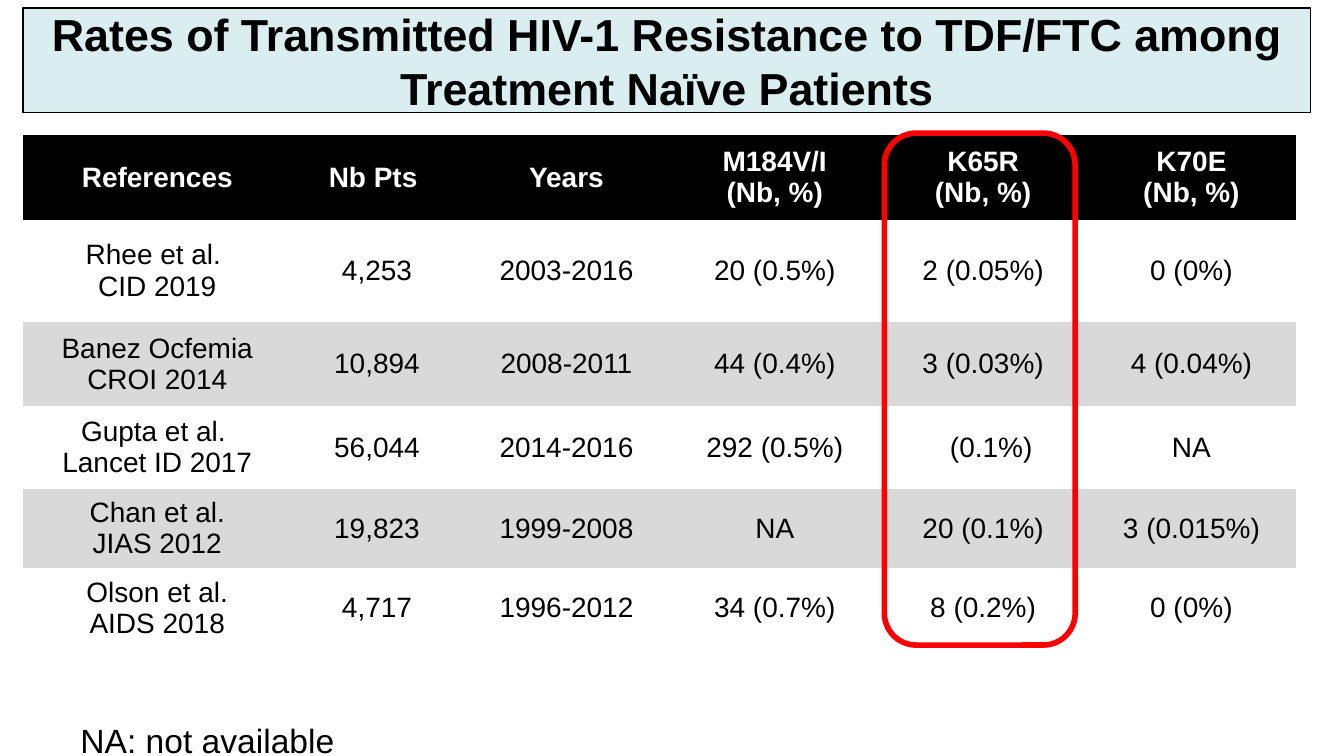
from lxml.etree import SubElement
from pptx import Presentation
from pptx.dml.color import RGBColor
from pptx.enum.shapes import MSO_SHAPE as Shape
from pptx.enum.text import MSO_ANCHOR as Anchor, MSO_AUTO_SIZE as AutoSize, PP_ALIGN as Align
from pptx.oxml.ns import qn
from pptx.util import Inches, Pt

BLACK = RGBColor(0x00, 0x00, 0x00)
WHITE = RGBColor(0xFF, 0xFF, 0xFF)
GREY = RGBColor(0xD9, 0xD9, 0xD9)
PALE_TEAL = RGBColor(0xDA, 0xED, 0xEF)
RED = RGBColor(0xFF, 0x00, 0x00)

FONT = "Arial"
PLAIN_TABLE = "{2D5ABB26-0587-4C30-8999-92F81FD0307C}"
SLIDE_WIDTH = 10
SLIDE_HEIGHT = SLIDE_WIDTH * 9 / 16
INSET = 0.01
COLUMNS = [2, 1.27, 1.55, 1.55, 1.55, 1.55]
ROWS = [0.62, 0.77, 0.62, 0.62, 0.59, 0.59]
ROW_FILLS = [BLACK, WHITE, GREY, WHITE, GREY, None]
EDGES = ["lnL", "lnR", "lnT", "lnB"]
RULED_EDGES = {0: ["lnT", "lnB"], 1: ["lnT"]}
K65R_COLUMN = 4
RATES = [
    ["References", "Nb Pts ", "Years", "M184V/I\n(Nb, %)", "K65R\n(Nb, %)", "K70E\n(Nb, %)"],
    ["Rhee et al. \nCID 2019", "4,253", "2003-2016", "20 (0.5%)", "2 (0.05%)", "0 (0%)"],
    ["Banez Ocfemia CROI 2014", "10,894", "2008-2011", "44 (0.4%)", "3 (0.03%)", "4 (0.04%)"],
    ["Gupta et al. \nLancet ID 2017", "56,044", "2014-2016", "292 (0.5%)", "(0.1%)", "NA"],
    ["Chan et al.\nJIAS 2012", "19,823", "1999-2008", "NA", "20 (0.1%)", "3 (0.015%)"],
    ["Olson et al.\nAIDS 2018", "4,717", "1996-2012", "34 (0.7%)", "8 (0.2%)", "0 (0%)"],
]


def write(frame, wording, size, color=BLACK, bold=False, align=Align.CENTER):
    """Fill a text frame with one run per line, each in its own paragraph."""
    for index, line in enumerate(wording.split("\n")):
        paragraph = frame.add_paragraph() if index else frame.paragraphs[0]
        paragraph.alignment = align
        run = paragraph.add_run()
        run.text = line
        run.font.name = FONT
        run.font.size = Pt(size)
        run.font.bold = bold
        run.font.color.rgb = color


def rule_cell(cell, ruled_edges):
    """Draw one-point black borders on the ruled edges and clear the others."""
    properties = cell._tc.get_or_add_tcPr()
    for edge in EDGES:
        border = SubElement(properties, qn(f"a:{edge}"), w=str(Pt(1)))
        if edge in ruled_edges:
            fill = SubElement(border, qn("a:solidFill"))
            SubElement(fill, qn("a:srgbClr"), val=str(BLACK))
        else:
            SubElement(border, qn("a:noFill"))


def add_title(slide, left, top, width, height):
    """Place the framed title band."""
    band = slide.shapes.add_shape(
        Shape.RECTANGLE, Inches(left), Inches(top), Inches(width), Inches(height))
    band.shadow.inherit = False
    band.fill.solid()
    band.fill.fore_color.rgb = PALE_TEAL
    band.line.color.rgb = BLACK
    band.line.width = Pt(0.75)
    frame = band.text_frame
    frame.word_wrap = True
    frame.vertical_anchor = Anchor.MIDDLE
    write(frame, "Rates of Transmitted HIV-1 Resistance to TDF/FTC among "
          "Treatment Naïve Patients", 24, bold=True)


def fill_cell(cell, wording, row):
    """Style and write one cell according to its row."""
    rule_cell(cell, RULED_EDGES.get(row, []))
    if ROW_FILLS[row] is None:
        cell.fill.background()
    else:
        cell.fill.solid()
        cell.fill.fore_color.rgb = ROW_FILLS[row]
    cell.margin_left = cell.margin_right = Inches(INSET)
    cell.margin_top = cell.margin_bottom = Inches(INSET)
    cell.vertical_anchor = Anchor.MIDDLE
    header = row == 0
    write(cell.text_frame, wording, 15, WHITE if header else BLACK, header)


def add_rates(slide, left, top, width, height):
    """Place the resistance table and the outline around its K65R column."""
    table = slide.shapes.add_table(
        len(ROWS), len(COLUMNS), Inches(left), Inches(top), Inches(width), Inches(height)).table
    table._tbl.tblPr.find(qn("a:tableStyleId")).text = PLAIN_TABLE
    for column, share in zip(table.columns, COLUMNS):
        column.width = Inches(width * share / sum(COLUMNS))
    for row, share in zip(table.rows, ROWS):
        row.height = Inches(height * share / sum(ROWS))
    for row, study in enumerate(RATES):
        for column, wording in enumerate(study):
            fill_cell(table.cell(row, column), wording, row)
    table.cell(3, K65R_COLUMN).margin_left = Inches(0.13)

    outline_left = left + sum(COLUMNS[:K65R_COLUMN]) + 0.04
    outline = slide.shapes.add_shape(
        Shape.ROUNDED_RECTANGLE, Inches(outline_left), Inches(top - 0.02),
        Inches(COLUMNS[K65R_COLUMN] - 0.13), Inches(height))
    outline.shadow.inherit = False
    outline.fill.background()
    outline.line.color.rgb = RED
    outline.line.width = Pt(3)


def add_footnote(slide, left, top, width, height):
    """Place the note that explains the abbreviation."""
    note = slide.shapes.add_textbox(Inches(left), Inches(top), Inches(width), Inches(height))
    frame = note.text_frame
    frame.word_wrap = False
    frame.auto_size = AutoSize.SHAPE_TO_FIT_TEXT
    write(frame, "NA: not available", 18, align=Align.LEFT)


def main():
    """Build and save the slide."""
    deck = Presentation()
    deck.slide_width, deck.slide_height = Inches(SLIDE_WIDTH), Inches(SLIDE_HEIGHT)
    slide = deck.slides.add_slide(deck.slide_layouts[6])
    add_title(slide, 0.17, 0.06, 9.58, 0.78)
    add_rates(slide, 0.17, 1.01, sum(COLUMNS), sum(ROWS))
    add_footnote(slide, 0.5, 5.31, 2.11, 0.4)
    deck.save("out.pptx")


if __name__ == "__main__":
    main()
